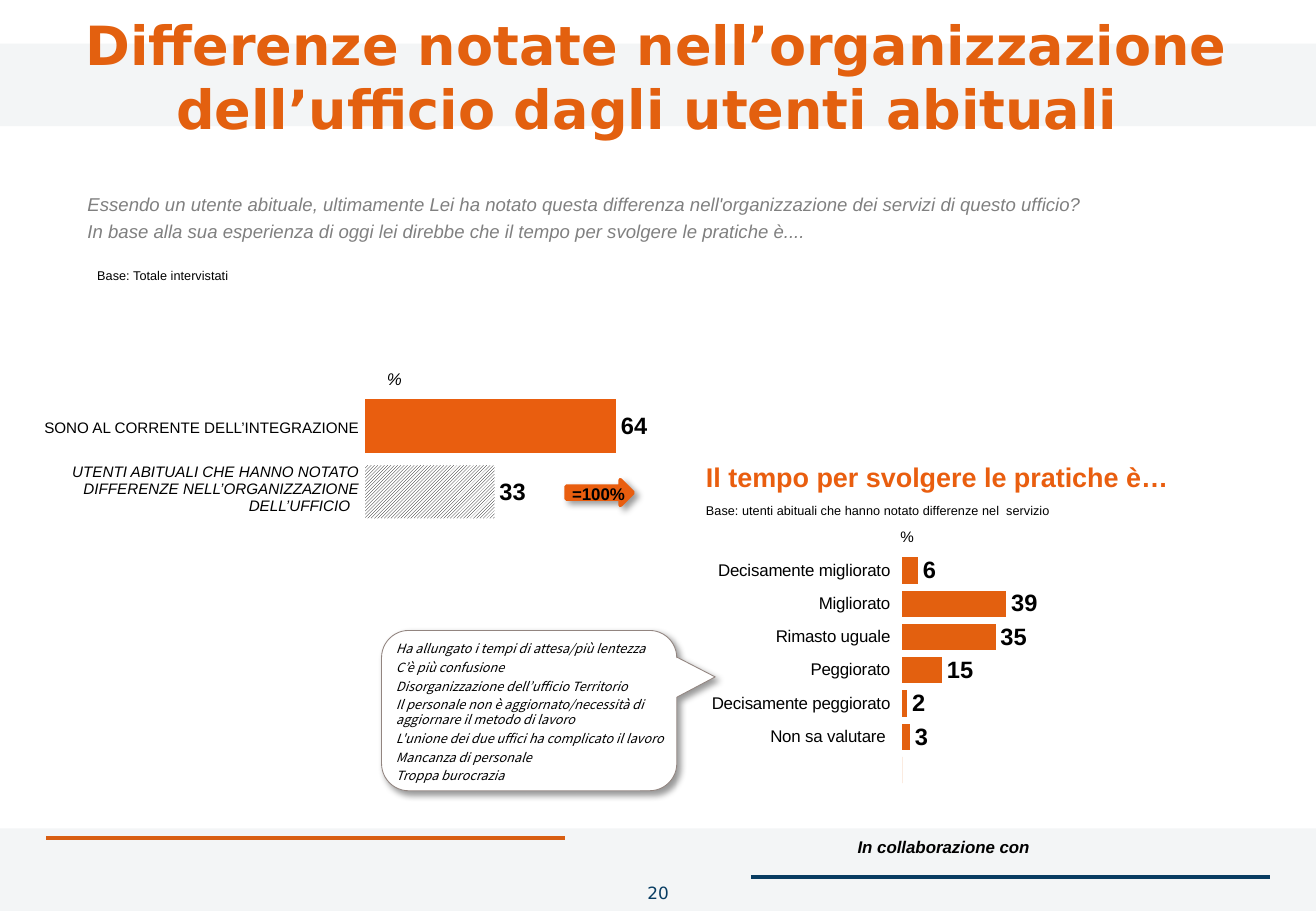
from lxml import etree
from pptx import Presentation
from pptx import util as u
from pptx.chart import data as chart_data
from pptx.dml import color as dml_color
from pptx.enum import chart as charts, dml, shapes, text
from pptx.oxml import parse_xml
from pptx.oxml.ns import nsdecls, qn

PX = 9144
ORANGE, VIVID_ORANGE, NAVY, BLACK, WHITE = "E3600F", "E95E0F", "073C62", "000000", "FFFFFF"
ALIGN = text.PP_ALIGN


def px(*lengths):
    return [u.Emu(round(length * PX)) for length in lengths]


def rgb(value):
    return dml_color.RGBColor.from_string(value)


def within(box, left, top, width, height):
    return box[0] + left, box[1] + top, width, height


def set_all(target, values):
    for name, value in values.items():
        setattr(target, name, value)


def set_font(font, size, name="Arial", color=BLACK, **styles):
    set_all(font, dict(size=u.Pt(size), name=name, **styles))
    font.color.rgb = rgb(color)


def set_margins(target, horizontal, top, bottom):
    left, upper, lower = px(horizontal, top, bottom)
    set_all(target, dict(margin_left=left, margin_right=left, margin_top=upper, margin_bottom=lower))


def add_text(slide, box, lines, font, inset=(8, 4), anchor=text.MSO_ANCHOR.TOP, gap=0, **layout):
    frame = slide.shapes.add_textbox(*px(*box)).text_frame
    set_all(frame, dict(word_wrap=True, vertical_anchor=anchor))
    set_margins(frame, inset[0], inset[1], inset[1])
    frame.text = "\n".join(lines)
    for index, paragraph in enumerate(frame.paragraphs):
        set_all(paragraph, layout)
        if index and gap:
            paragraph.space_before = u.Pt(gap)
        for run in paragraph.runs:
            set_font(run.font, **font)


def add_shape(slide, kind, box, fill, line=None, width=1, alpha=None, shadow=False):
    shape = slide.shapes.add_shape(kind, *px(*box))
    shape.shadow.inherit = False
    shape.fill.solid()
    shape.fill.fore_color.rgb = rgb(fill)
    if line:
        shape.line.color.rgb = rgb(line)
        shape.line.width = u.Pt(width)
    else:
        shape.line.fill.background()
    properties = shape._element.spPr
    if alpha:
        tint = properties.find(qn("a:solidFill")).find(qn("a:srgbClr"))
        etree.SubElement(tint, qn("a:alpha")).set("val", str(alpha * 1000))
    if shadow:
        properties.find(qn("a:effectLst")).append(parse_xml(
            f'<a:outerShdw {nsdecls("a")} blurRad="50800" dist="38100" dir="2700000" algn="tl" '
            'rotWithShape="0"><a:srgbClr val="000000"><a:alpha val="40000"/></a:srgbClr></a:outerShdw>'))
    return shape


def add_rule(slide, left, top, width, color):
    rule = slide.shapes.add_connector(shapes.MSO_CONNECTOR.STRAIGHT, *px(left, top, left + width, top))
    rule.line.color.rgb = rgb(color)
    rule.line.width = u.Pt(2)
    etree.SubElement(rule._element.spPr, qn("a:effectLst"))


def add_bars(slide, box, categories, values, color, gap, plot, label_format):
    source = chart_data.CategoryChartData()
    source.categories = categories
    source.add_series("Series 1", values)
    chart = slide.shapes.add_chart(charts.XL_CHART_TYPE.BAR_CLUSTERED, *px(*box), source).chart
    set_all(chart, dict(has_legend=False, has_title=False))
    set_font(chart.font, 18, "DejaVu Sans")
    set_all(chart.value_axis, dict(minimum_scale=0, maximum_scale=100, visible=False,
                                   has_major_gridlines=False))
    set_all(chart.category_axis, dict(reverse_order=True, has_major_gridlines=False))
    chart.category_axis.format.line.fill.background()
    bars = chart.plots[0]
    set_all(bars, dict(gap_width=gap, vary_by_categories=False, has_data_labels=True))
    set_all(bars.data_labels, dict(show_value=True, number_format=label_format,
                                   number_format_is_linked=False,
                                   position=charts.XL_LABEL_POSITION.OUTSIDE_END))
    set_font(bars.data_labels.font, 14, bold=True)
    series = bars.series[0]
    series.format.fill.solid()
    series.format.fill.fore_color.rgb = rgb(color)
    area = chart._chartSpace.chart.plotArea
    for old in area.findall(qn("c:layout")):
        area.remove(old)
    sizes = "".join(f'<c:{key} val="{value}"/>' for key, value in zip("xywh", plot))
    area.insert(0, parse_xml(
        f'<c:layout {nsdecls("c")}><c:manualLayout><c:layoutTarget val="inner"/>'
        f'<c:xMode val="edge"/><c:yMode val="edge"/>{sizes}</c:manualLayout></c:layout>'))
    return chart


def draw_footer(slide, box):
    add_rule(slide, box[0] + 38, box[1] + 8, 427, ORANGE)
    add_rule(slide, box[0] + 618, box[1] + 40, 427, NAVY)
    add_shape(slide, shapes.MSO_SHAPE.RECTANGLE, box, "1E3D5C", alpha=5)
    add_text(slide, within(box, 655, 3, 205, 26), ["In collaborazione con "],
             dict(size=10, bold=True, italic=True), (9, 4), alignment=ALIGN.RIGHT)
    add_text(slide, within(box, 494, 40, 95, 39), ["20"],
             dict(size=10, name="DejaVu Sans", color=NAVY), (10, 5), alignment=ALIGN.CENTER)


def draw_header(slide, box):
    add_shape(slide, shapes.MSO_SHAPE.RECTANGLE, within(box, 0, 36, box[2], 68), "1E3D5C", alpha=5)
    add_text(slide, within(box, -1, 0, box[2], box[3]),
             ["Differenze notate nell’organizzazione\vdell’ufficio dagli utenti abituali "],
             dict(size=32, name="DejaVu Sans", color=ORANGE, bold=True), (10, 5),
             text.MSO_ANCHOR.MIDDLE, alignment=ALIGN.CENTER)


def draw_question(slide, box):
    add_text(slide, within(box, 0, 0, box[2], 55), [
        "Essendo un utente abituale, ultimamente Lei ha notato questa differenza "
        "nell'organizzazione dei servizi di questo ufficio?",
        "In base alla sua esperienza di oggi lei direbbe che il tempo per svolgere le pratiche è....",
    ], dict(size=11, color="808080", italic=True), (9, 4), gap=2.5, alignment=ALIGN.JUSTIFY)
    add_text(slide, within(box, 9, 55, 242, 20), ["Base: Totale intervistati"],
             dict(size=7.5), alignment=ALIGN.JUSTIFY, line_spacing=1.5)


def draw_awareness(slide, box):
    add_shape(slide, shapes.MSO_SHAPE.RIGHT_ARROW, within(box, 435, 92, 55, 21),
              VIVID_ORANGE, VIVID_ORANGE, 2.25, shadow=True)
    add_text(slide, within(box, 418, 90, 87, 24), ["=100%"], dict(size=10, bold=True),
             (10, 5), alignment=ALIGN.CENTER)
    add_text(slide, within(box, 274, 0, 39, 17), ["%"], dict(size=10, italic=True), (0, 0),
             text.MSO_ANCHOR.MIDDLE, alignment=ALIGN.CENTER)
    chart = add_bars(slide, within(box, 136, 19, 651, 120), ["1", "2"], [64, 33], VIVID_ORANGE,
                     24, (0.205, 0.013, 0.496, 0.905), "0")
    chart.category_axis.visible = False
    chart.value_axis.major_unit = 10
    noticed = chart.plots[0].series[0].points[1].format.fill
    noticed.patterned()
    noticed.pattern = dml.MSO_PATTERN.DARK_UPWARD_DIAGONAL
    noticed.fore_color.rgb = rgb(BLACK)
    noticed.back_color.rgb = rgb(WHITE)

    rows = [("SONO AL CORRENTE DELL’INTEGRAZIONE", 44, False),
            ("UTENTI ABITUALI CHE HANNO NOTATO DIFFERENZE NELL’ORGANIZZAZIONE DELL’UFFICIO  ", 56, True)]
    labels = slide.shapes.add_table(2, 1, *px(*within(box, 0, 27, 265, 100))).table
    set_all(labels, dict(first_row=False, horz_banding=False))
    for index, (wording, height, italic) in enumerate(rows):
        labels.rows[index].height = px(height)[0]
        cell = labels.cell(index, 0)
        cell.fill.background()
        cell.vertical_anchor = text.MSO_ANCHOR.MIDDLE
        set_margins(cell, 1, 1, 0)
        cell.text = wording
        paragraph = cell.text_frame.paragraphs[0]
        paragraph.alignment = ALIGN.RIGHT
        set_font(paragraph.runs[0].font, 9, italic=italic, bold=False)


def draw_timing(slide, box):
    chart = add_bars(slide, within(box, 0, 57, 463, 226),
                     ["Decisamente migliorato", "Migliorato", "Rimasto uguale", "Peggiorato",
                      "Decisamente peggiorato", "Non sa valutare ", ""],
                     [6, 39, 35, 15, 2, 3, 0], ORANGE, 27, (0.448, 0.106, 0.475, 0.849), "#,##0;;")
    set_font(chart.category_axis.tick_labels.font, 10)
    add_text(slide, within(box, 38, 0, 488, 34), ["Il tempo per svolgere le pratiche è…"],
             dict(size=16, color=VIVID_ORANGE, bold=True))
    add_text(slide, within(box, 38, 29, 333, 20),
             ["Base: utenti abituali che hanno notato differenze nel  servizio "],
             dict(size=7.5), alignment=ALIGN.JUSTIFY, line_spacing=1.5)
    add_text(slide, within(box, 191, 55, 41, 23), ["%"], dict(size=9), alignment=ALIGN.CENTER)


def draw_complaints(slide, box):
    callout = add_shape(slide, shapes.MSO_SHAPE.ROUNDED_RECTANGULAR_CALLOUT, box,
                        WHITE, "928580", 0.5, shadow=True)
    for index, value in enumerate((0.63, -0.21, 0.17)):
        callout.adjustments[index] = value
    add_text(slide, within(box, 2, 4, 257, 128), [
        "Ha allungato i tempi di attesa/più lentezza",
        "C’è più confusione",
        "Disorganizzazione dell’ufficio Territorio",
        "Il personale non è aggiornato/necessità di aggiornare il metodo di lavoro",
        "L'unione dei due uffici ha complicato il lavoro",
        "Mancanza di personale",
        "Troppa burocrazia",
    ], dict(size=7.5, name="Noto Sans CJK KR", italic=True), (10, 5), gap=2, line_spacing=u.Pt(9))


def main():
    deck = Presentation()
    deck.slide_width, deck.slide_height = px(1083, 750)
    slide = deck.slides.add_slide(deck.slide_layouts[6])
    draw_footer(slide, (0, 682, 1083, 68))
    draw_header(slide, (0, 0, 1083, 125))
    draw_question(slide, (63, 155, 843, 75))
    draw_timing(slide, (535, 375, 526, 283))
    draw_awareness(slide, (31, 303, 787, 139))
    draw_complaints(slide, (314, 519, 243, 132))
    deck.save("out.pptx")


if __name__ == "__main__":
    main()
